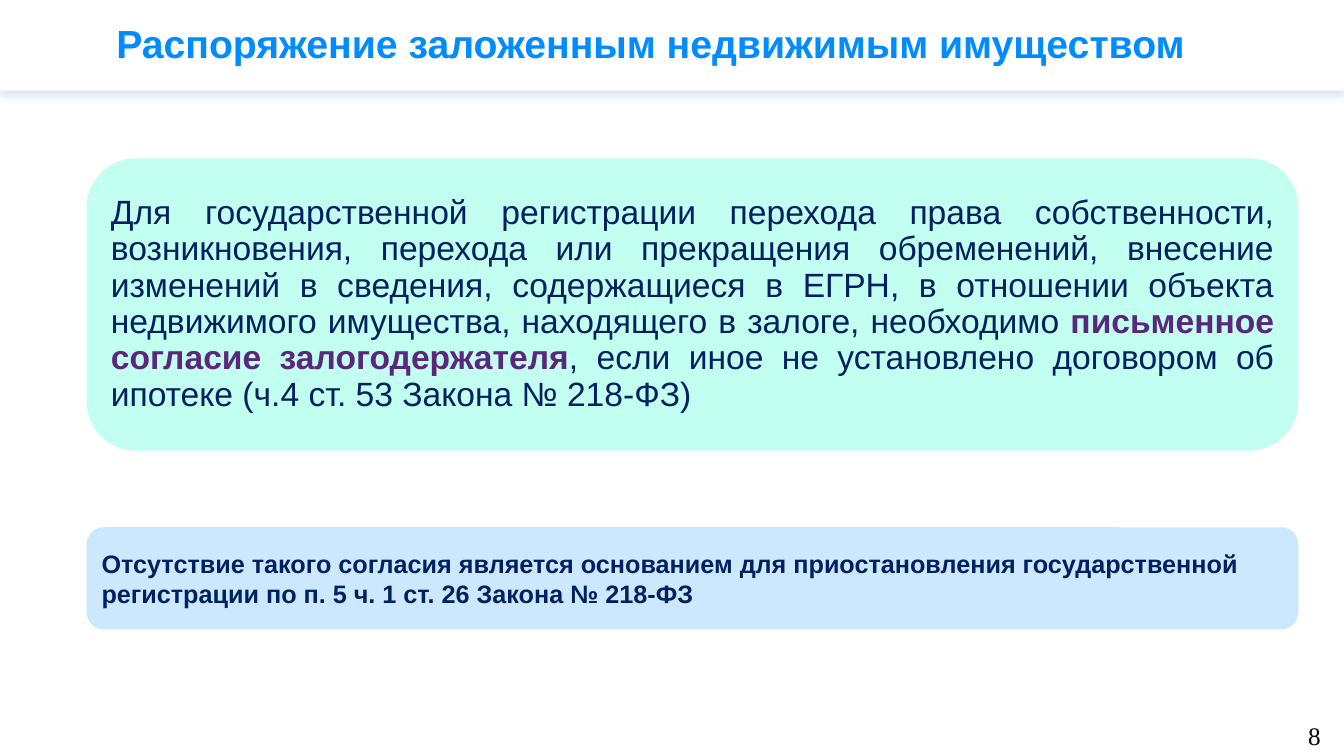
import pptx
import pptx.util
import pptx.oxml
import pptx.dml.color
import pptx.enum.shapes
import pptx.enum.text

ALIGN = pptx.enum.text.PP_ALIGN
SHAPE = pptx.enum.shapes.MSO_SHAPE
SHADOW = (
    '<a:effectLst xmlns:a="http://schemas.openxmlformats.org/drawingml/2006/main">'
    '<a:outerShdw blurRad="76200" dist="38100" dir="5400000" algn="t" rotWithShape="0">'
    '<a:srgbClr val="004680"><a:alpha val="15000"/></a:srgbClr>'
    '</a:outerShdw></a:effectLst>'
)


def rgb(value):
    """Turn a hex string into a colour."""
    return pptx.dml.color.RGBColor.from_string(value)


class Deck:
    """Holds the presentation, its style and the current slide."""

    font = {"name": "Arial", "bold": False, "color": "002060"}

    def __init__(self, width, height):
        """Open a title-only slide of the given size in inches."""
        self.prs = pptx.Presentation()
        self.prs.slide_width = pptx.util.Inches(width)
        self.prs.slide_height = pptx.util.Inches(height)
        self.s = self.prs.slides.add_slide(self.prs.slide_layouts[5])

    def box(self, left, top, width, height):
        """Convert percentages of the slide into lengths."""
        w, h = self.prs.slide_width, self.prs.slide_height
        shares = zip((left, top, width, height), (w, h, w, h))
        return [round(share * full / 100) for share, full in shares]

    def label(self, sp, runs, align=ALIGN.LEFT, spacing=1.0, **font):
        """Fill a shape with one paragraph of (text, format) runs."""
        tf = sp.text_frame
        frame = {"word_wrap": True, "auto_size": pptx.enum.text.MSO_AUTO_SIZE.NONE,
                 "vertical_anchor": pptx.enum.text.MSO_ANCHOR.MIDDLE}
        for key, value in frame.items():
            setattr(tf, key, value)
        p = tf.paragraphs[0]
        p.alignment, p.line_spacing = align, spacing
        for text, change in runs:
            r = p.add_run()
            r.text = text
            for key, value in {**self.font, **font, **change}.items():
                if key == "color":
                    r.font.color.rgb = rgb(value)
                else:
                    setattr(r.font, key, value)

    def panel(self, area, fill, shape=SHAPE.ROUNDED_RECTANGLE):
        """Add a borderless filled shape."""
        sp = self.s.shapes.add_shape(shape, *self.box(*area))
        sp.shadow.inherit = False
        sp.fill.solid()
        sp.fill.fore_color.rgb = rgb(fill)
        sp.line.fill.background()
        return sp

    def header(self, area):
        """Add the white shadowed band behind the title."""
        sp = self.panel(area, "FFFFFF", SHAPE.RECTANGLE)
        effects = sp.element.spPr.find(pptx.oxml.ns.qn("a:effectLst"))
        effects.getparent().replace(effects, pptx.oxml.parse_xml(SHADOW))
        self.s.shapes.title.element.addprevious(sp.element)

    def title(self, area, text):
        """Place and format the title placeholder."""
        sp = self.s.shapes.title
        for key, value in zip(("left", "top", "width", "height"), self.box(*area)):
            setattr(sp, key, value)
        self.label(sp, [(text, {})], spacing=0.9, bold=True,
                   size=pptx.util.Pt(28), color="008CFF")

    def number(self, area, text):
        """Add the slide number."""
        sp = self.s.shapes.add_textbox(*self.box(*area))
        self.label(sp, [(text, {})], name="Times New Roman",
                   size=pptx.util.Pt(18), color="000000")


def main():
    """Build and save the slide."""
    deck = Deck(13.33, 7.5)
    left, width = 6.45, 90.15
    deck.header((0, 0, 100, 12))
    deck.title((7.9, 0, 86.4, 12.1), "Распоряжение заложенным недвижимым имуществом")

    note = deck.panel((left, 69.75, width, 13.5), "CCE8FF")
    deck.label(note, [(
        "Отсутствие такого согласия является основанием для приостановления "
        "государственной регистрации по п. 5 ч. 1 ст. 26 Закона № 218-ФЗ", {})],
        bold=True, size=pptx.util.Pt(18))

    rule = deck.panel((left, 20.95, width, 38.65), "C2FFF0")
    deck.label(rule, [
        ("Для государственной регистрации перехода права собственности, "
         "возникновения, перехода или прекращения обременений, внесение изменений "
         "в сведения, содержащиеся в ЕГРН, в отношении объекта недвижимого "
         "имущества, находящего в залоге, необходимо ", {}),
        ("письменное согласие залогодержателя", {"bold": True, "color": "5B277D"}),
        (", если иное не установлено договором об ипотеке "
         "(ч.4 ст. 53 Закона № 218-ФЗ)", {}),
    ], align=ALIGN.JUSTIFY, spacing=0.9, size=pptx.util.Pt(24))

    deck.number((96.6, 94.65, 3.4, 5.35), "8")
    deck.prs.save("out.pptx")


if __name__ == "__main__":
    main()
